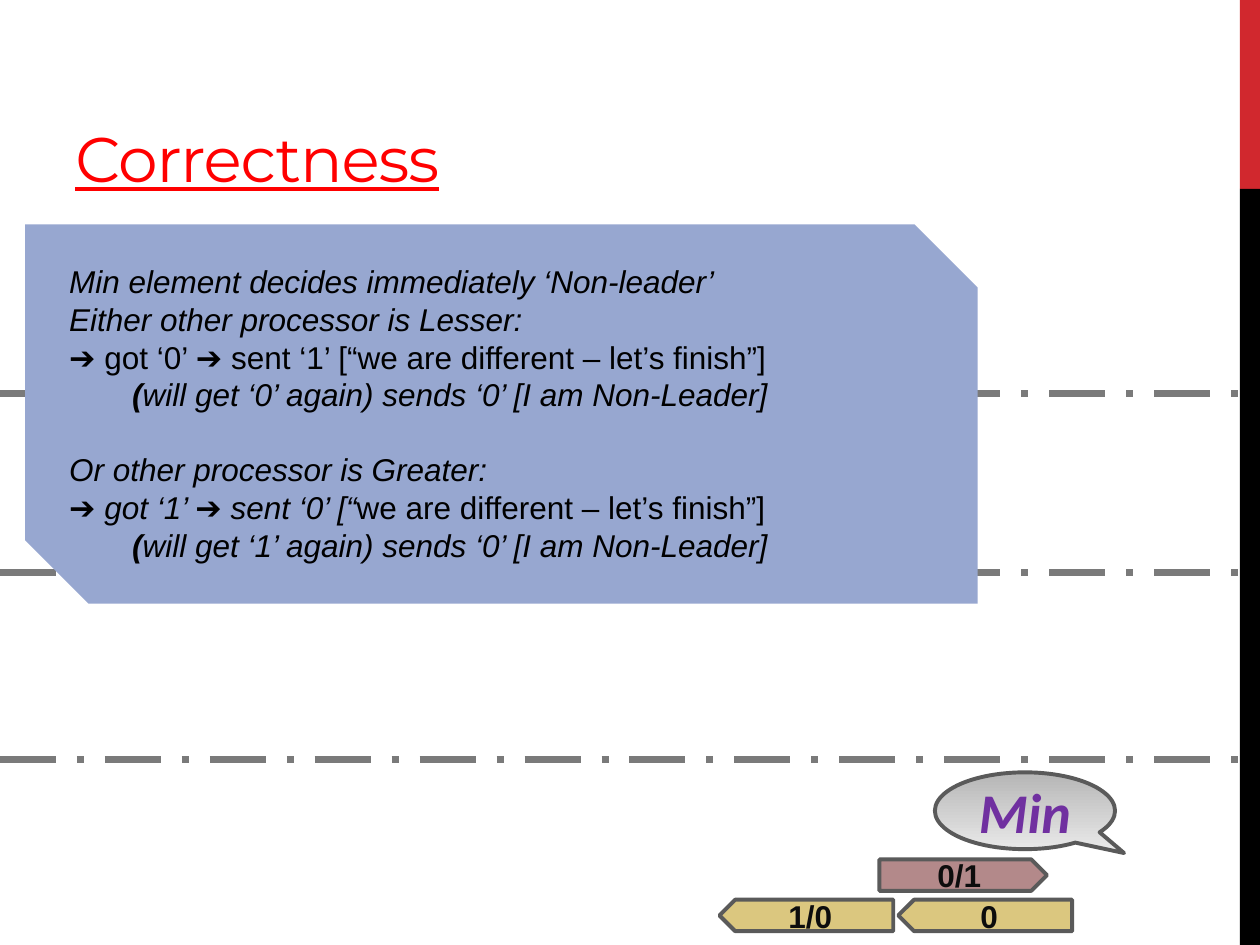
from lxml import etree
from pptx import Presentation, util as u
from pptx.dml.color import RGBColor
from pptx.enum import dml, shapes, text
from pptx.oxml.ns import qn

COLORS = {"red": "D1282E", "black": "000000", "title": "FF0000", "panel": "97A7D0",
          "dash": "7A7A7A", "outline": "5A5A5A", "light": "E8E8E8", "dark": "B6B6B6",
          "purple": "7030A0", "label": "0D0D0D", "rose": "681417", "gold": "B89101"}
WIDTH, HEIGHT = u.Inches(10), u.Inches(7.5)
COLUMN, ROW = WIDTH // 10, HEIGHT // 7.5

presentation = Presentation()
presentation.slide_width, presentation.slide_height = WIDTH, HEIGHT
slide = presentation.slides.add_slide(presentation.slide_layouts[6])


def color(name):
    return RGBColor.from_string(COLORS[name])


def add_block(preset, left, top, width, height, fill, outlined=False):
    shape = slide.shapes.add_shape(preset, int(left * COLUMN), int(top * ROW),
                                   int(width * COLUMN), int(height * ROW))
    shape.shadow.inherit = False
    shape.fill.solid()
    shape.fill.fore_color.rgb = color(fill)
    if outlined:
        shape.line.color.rgb = color("outline")
        shape.line.width = u.Pt(2.25)
    else:
        shape.line.fill.background()
    return shape


for top, height, fill in ((0, 1.5, "red"), (1.5, 6, "black")):
    add_block(shapes.MSO_SHAPE.RECTANGLE, 9.84, top, 0.16, height, fill)

title = slide.shapes.add_textbox(int(0.5 * COLUMN), int(0.17 * ROW),
                                 int(9.3 * COLUMN), int(1.38 * ROW))
frame = title.text_frame
frame.word_wrap = True
frame.vertical_anchor = text.MSO_ANCHOR.BOTTOM
frame.margin_bottom = 0
paragraph = frame.paragraphs[0]
run = paragraph.add_run()
run.text = "Correctness"
run.font.name, run.font.size, run.font.underline = "Montserrat", u.Pt(36), True
run.font.color.rgb = color("title")
run.font._element.set("spc", "-60")

callout = add_block(shapes.MSO_SHAPE.OVAL_CALLOUT, 7.42, 6.13, 1.43, 0.61, "light", True)
callout.adjustments[0], callout.adjustments[1] = 0.55, 0.55
callout.fill.gradient()
callout.fill.gradient_angle = 270
for stop, name in zip(callout.fill.gradient_stops, ("dark", "light")):
    stop.color.rgb = color(name)
labels = [(callout, "Min", "Calibri", 32, "purple")]

for left, top, width, fill, label in ((6.98, 6.82, 1.33, "rose", "0/1"),
                                      (5.71, 7.14, 1.38, "gold", "1/0"),
                                      (7.13, 7.14, 1.38, "gold", "0")):
    arrow = add_block(shapes.MSO_SHAPE.PENTAGON, left, top, width, 0.25, fill, True)
    fill_color = arrow._element.spPr.find(qn("a:solidFill"))[0]
    etree.SubElement(fill_color, qn("a:alpha"), val="50000")
    if fill == "gold":
        arrow._element.spPr.find(qn("a:xfrm")).set("flipH", "1")
    labels.append((arrow, label, "Arial", 18, "label"))

for shape, label, font, size, name in labels:
    shape.text_frame.vertical_anchor = text.MSO_ANCHOR.MIDDLE
    paragraph = shape.text_frame.paragraphs[0]
    paragraph.text = label
    paragraph.alignment = text.PP_ALIGN.CENTER
    paragraph.font.name, paragraph.font.size, paragraph.font.bold = font, u.Pt(size), True
    paragraph.font.italic = shape is callout
    paragraph.font.color.rgb = color(name)

for row in (3.12, 4.54, 6.03):
    line = slide.shapes.add_connector(shapes.MSO_CONNECTOR.STRAIGHT, 0, int(row * ROW),
                                      int(9.96 * COLUMN), int(row * ROW))
    line.line.color.rgb = color("dash")
    line.line.width = u.Pt(4)
    line.line.dash_style = dml.MSO_LINE.LONG_DASH_DOT
    etree.SubElement(line._element.spPr, qn("a:effectLst"))

panel = add_block(shapes.MSO_SHAPE.SNIP_2_DIAG_RECTANGLE, 0.2, 1.78, 7.56, 3.01, "panel")
frame = panel.text_frame
frame.vertical_anchor = text.MSO_ANCHOR.TOP
finish = "we are different – let’s finish”]"
proof = [
    [("Min element decides immediately ‘Non-leader’", "i")],
    [("Either other processor is Lesser:", "i")],
    [("➔ ", "i"), ("got ‘0’ ➔ sent ‘1’ [“" + finish, "")],
    [("\t(", "bi"), ("will get ‘0’ again) sends ‘0’ [I am Non-Leader]", "i")],
    [("Or other processor is Greater:", "i")],
    [("➔ got ‘1’ ➔ sent ‘0’ [“", "i"), (finish, "")],
    [("\t(", "bi"), ("will get ‘1’ again) sends ‘0’ [I am Non-Leader]", "i")],
]
for index, pieces in enumerate(proof):
    paragraph = frame.add_paragraph() if index else frame.paragraphs[0]
    paragraph.alignment = text.PP_ALIGN.LEFT
    if index == 4:
        paragraph.space_before = u.Pt(21)
    paragraph.font.name, paragraph.font.size = "Arial", u.Pt(18)
    paragraph.font.color.rgb = color("black")
    for words, style in pieces:
        run = paragraph.add_run()
        run.text = words
        run.font.bold, run.font.italic = "b" in style, "i" in style

presentation.save("out.pptx")
